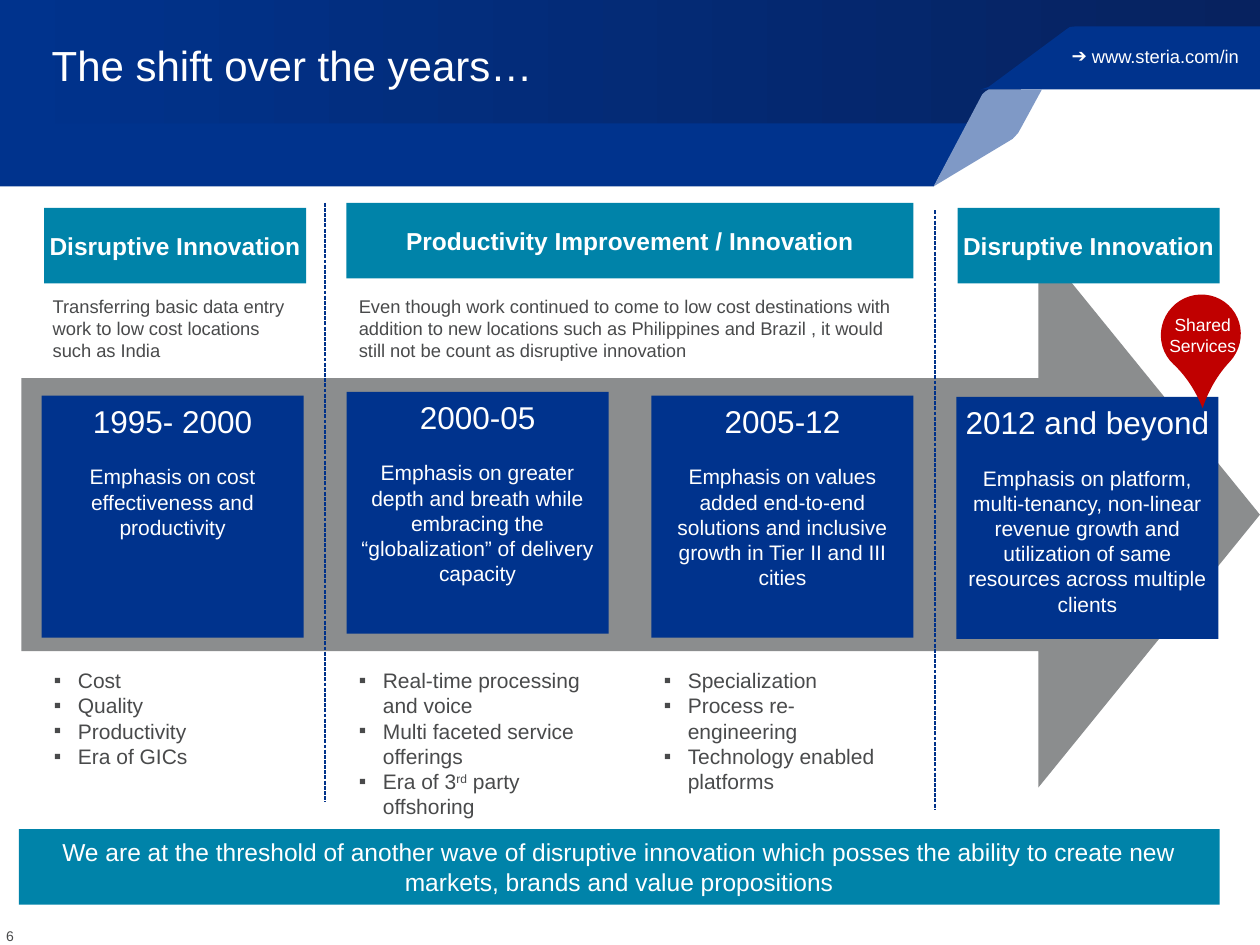
from dataclasses import dataclass

from lxml.etree import SubElement
from pptx import Presentation
from pptx.dml.color import RGBColor
from pptx.enum.dml import MSO_LINE
from pptx.enum.shapes import MSO_CONNECTOR, MSO_SHAPE
from pptx.enum.text import MSO_ANCHOR, PP_ALIGN
from pptx.oxml.ns import qn
from pptx.util import Inches, Pt


@dataclass(frozen=True)
class Theme:
    font: str = "Arial"
    navy: str = "00338D"
    night: str = "07225F"
    fold: str = "7F99C6"
    teal: str = "0083A9"
    gray: str = "8B8D8E"
    ink: str = "494A4B"
    red: str = "C00000"
    dash: str = "00328A"
    white: str = "FFFFFF"
    title: float = 24
    year: float = 18
    head: float = 14
    body: float = 12
    note: float = 10.5
    pin: float = 10
    page: float = 8


T = Theme()
MID = {"vertical_anchor": MSO_ANCHOR.MIDDLE}
SLIM = {"margin_left": 0, "margin_right": 0}


def hue(code):
    return RGBColor.from_string(code)


def apply(item, form):
    for key, value in form.items():
        setattr(item, key, value)


def place(shape, box):
    names = ("left", "top", "width", "height")
    apply(shape, dict(zip(names, map(Inches, box))))


def paint(shape, color):
    shape.fill.solid()
    shape.fill.fore_color.rgb = hue(color)
    shape.line.fill.background()
    shape.shadow.inherit = False
    return shape


def block(slide, box, color, kind=MSO_SHAPE.RECTANGLE):
    return paint(slide.shapes.add_shape(kind, *map(Inches, box)), color)


def mark(para, sign, hang):
    props = para._p.get_or_add_pPr()
    props.set("marL", str(Inches(hang)))
    props.set("indent", str(-Inches(hang)))
    SubElement(props, qn("a:buFont")).set("typeface", T.font)
    SubElement(props, qn("a:buChar")).set("char", sign)


def write(para, text, size, color, bold=False, align=PP_ALIGN.LEFT):
    para.alignment = align
    for i, part in enumerate(text.split("^")):
        run = para.add_run()
        run.text = part
        apply(run.font, {"name": T.font, "size": Pt(size), "bold": bold})
        run.font.color.rgb = hue(color)
        if i % 2:
            run._r.get_or_add_rPr().set("baseline", "30000")


def label(slide, box, text, size, color, align=PP_ALIGN.LEFT, **form):
    frame = slide.shapes.add_textbox(*map(Inches, box)).text_frame
    apply(frame, {"word_wrap": True, **form})
    write(frame.paragraphs[0], text, size, color, align=align)
    return frame


def outline(slide, box, points, color):
    x, y, w, h = box
    spots = [(Inches(x + a * w), Inches(y + b * h)) for a, b in points]
    path = slide.shapes.build_freeform(*spots[0])
    path.add_line_segments(spots[1:])
    return paint(path.convert_to_shape(), color)


def header(slide, box, title, link):
    x, y, w, h = box
    sky = outline(slide, box, [(0, 0), (1, 0), (1, 0.4), (0.83, 0.4),
                               (0.72, 1), (0, 1)], T.navy)
    sky.fill.gradient()
    sky.fill.gradient_angle = 0
    for stop, color, spot in zip(sky.fill.gradient_stops, (T.navy, T.night), (0, 1)):
        stop.color.rgb = hue(color)
        stop.position = spot
    outline(slide, (x, y + 0.98, 7.68, 0.5),
            [(0, 0), (1, 0), (0.965, 1), (0, 1)], T.navy)
    outline(slide, (x + 7.78, y + 0.21, 2.22, 0.5),
            [(0, 1), (0.01, 0.99), (0.03, 0.96), (0.31, 0.04), (0.32, 0.01),
             (0.34, 0), (1, 0), (1, 1)], T.navy)
    outline(slide, (x + 7.41, y + 0.71, 0.86, 0.77),
            [(0.45, 0.05), (0.48, 0.02), (0.51, 0), (1, 0), (0.81, 0.39),
             (0.78, 0.45), (0.73, 0.51), (0, 1)], T.fold)
    web = label(slide, (x + 8.37, y + 0.31, 1.6, 0.28), link, T.note, T.white,
                PP_ALIGN.CENTER, word_wrap=False)
    mark(web.paragraphs[0], "➔", 0.09)
    name = slide.shapes.title
    slide.shapes._spTree.append(name._element)
    place(name, (x + 0.31, y + 0.13, 7.36, 0.77))
    apply(name.text_frame, MID)
    write(name.text_frame.paragraphs[0], title, T.title, T.white)


def arrow(slide, box):
    shape = block(slide, box, T.gray, MSO_SHAPE.RIGHT_ARROW)
    shape.adjustments[0] = 0.5
    shape.adjustments[1] = 0.406


def stage(slide, box, year, text, form):
    frame = block(slide, box, T.navy).text_frame
    apply(frame, {"word_wrap": True, "vertical_anchor": MSO_ANCHOR.TOP, **form})
    write(frame.paragraphs[0], year, T.year, T.white, align=PP_ALIGN.CENTER)
    para = frame.add_paragraph()
    para.space_before = Pt(13.8)
    write(para, text, T.body, T.white, align=PP_ALIGN.CENTER)


def points(slide, box, items):
    frame = slide.shapes.add_textbox(*map(Inches, box)).text_frame
    frame.word_wrap = True
    for i, item in enumerate(items):
        para = frame.add_paragraph() if i else frame.paragraphs[0]
        mark(para, "▪", 0.19)
        write(para, item, T.body, T.ink)


def banner(slide, box, text, bold=True, form=SLIM):
    frame = block(slide, box, T.teal).text_frame
    apply(frame, {"word_wrap": True, **MID, **form})
    write(frame.paragraphs[0], text, T.head, T.white, bold, PP_ALIGN.CENTER)


def pin(slide, box, text):
    x, y, w, h = box
    drop = block(slide, (x + 0.07, y, 0.64, 0.63), T.red, MSO_SHAPE.TEAR)
    drop.adjustments[0] = 1.302
    drop.rotation = 133.2
    label(slide, (x, y + 0.1, w, 0.45), text, T.pin, T.white, PP_ALIGN.CENTER)


def divide(slide, box):
    x, y, w, h = box
    line = slide.shapes.add_connector(
        MSO_CONNECTOR.STRAIGHT, *map(Inches, (x, y, x + w, y + h)))
    apply(line.line, {"width": Pt(0.75), "dash_style": MSO_LINE.SQUARE_DOT})
    line.line.color.rgb = hue(T.dash)
    SubElement(line._element.spPr, qn("a:effectLst"))


STAGES = [
    (3.14, "1995- 2000", "Emphasis on cost effectiveness and productivity",
     ["Cost", "Quality", "Productivity", "Era of GICs"], {}),
    (3.11, "2000-05", "Emphasis on greater depth and breath while embracing "
     "the “globalization” of delivery capacity",
     ["Real-time processing and voice", "Multi faceted service offerings",
      "Era of 3^rd^ party offshoring"], {}),
    (3.14, "2005-12", "Emphasis on values added end-to-end solutions and "
     "inclusive growth in Tier II and III cities",
     ["Specialization", "Process re-engineering",
      "Technology enabled platforms"], {}),
    (3.15, "2012 and beyond", "Emphasis on platform, multi-tenancy, non-linear "
     "revenue growth and utilization of same resources across multiple clients",
     [], SLIM),
]
HEADS = [
    (0.35, 1.65, 2.08, "Disruptive Innovation"),
    (2.75, 1.61, 4.5, "Productivity Improvement / Innovation"),
    (7.6, 1.65, 2.08, "Disruptive Innovation"),
]
NOTES = [
    (0.32, 2.08, "Transferring basic data entry work to low cost locations such as India"),
    (2.75, 4.5, "Even though work continued to come to low cost destinations with "
     "addition to new locations such as Philippines and Brazil , it would still "
     "not be count as disruptive innovation"),
]


def main():
    deck = Presentation()
    apply(deck, {"slide_width": Inches(10), "slide_height": Inches(7.5)})
    slide = deck.slides.add_slide(deck.slide_layouts[5])
    header(slide, (0, 0, 10, 1.39), "The shift over the years…", " www.steria.com/in")
    arrow(slide, (0.17, 1.92, 9.83, 4.33))
    label(slide, (-0.05, 7.14, 0.43, 0.4), "6", T.page, T.ink,
          vertical_anchor=MSO_ANCHOR.BOTTOM)
    for i, (top, year, text, items, form) in enumerate(STAGES):
        left = 0.33 + i * 2.42
        stage(slide, (left, top, 2.08, 1.92), year, text, form)
        if items:
            points(slide, (left, 5.25, 2.08, 1.31), items)
    for left, top, wide, text in HEADS:
        banner(slide, (left, top, wide, 0.6), text)
    for left, wide, text in NOTES:
        label(slide, (left, 2.29, wide, 0.63), text, T.note, T.ink)
    banner(slide, (0.15, 6.58, 9.53, 0.6), "We are at the threshold of another wave "
           "of disruptive innovation which posses the ability to create new markets, "
           "brands and value propositions", False, {})
    pin(slide, (9.14, 2.34, 0.81, 0.63), "Shared Services")
    for left, top in ((2.58, 1.61), (7.42, 1.67)):
        divide(slide, (left, top, 0, 4.75))
    deck.save("out.pptx")


if __name__ == "__main__":
    main()
